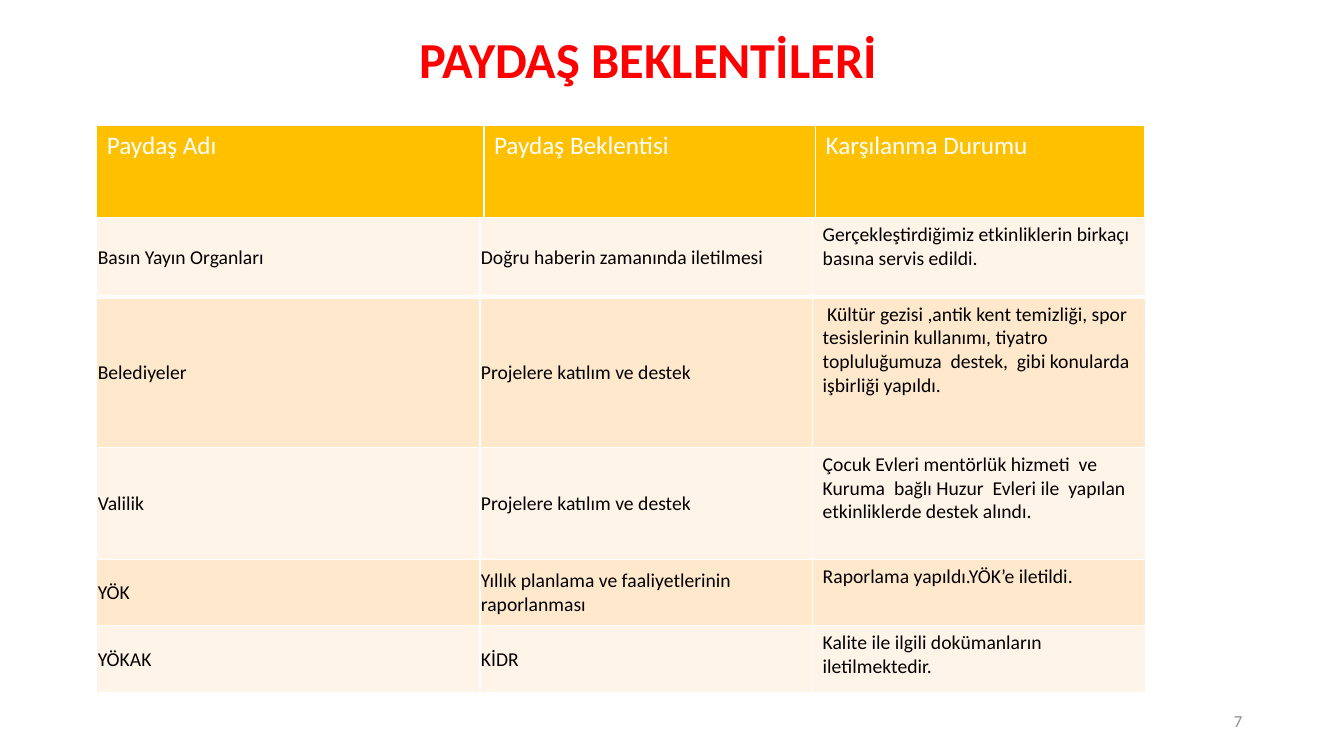
from lxml import etree
from pptx import Presentation
from pptx.dml.color import RGBColor
from pptx.enum import text
from pptx.oxml.ns import qn
from pptx.util import Inches, Pt

COLORS = {"title": "FF0000", "header": "FFC000", "light": "FFF4E7", "dark": "FFE8CC",
          "white": "FFFFFF", "black": "000000", "number": "8C8C8C"}
LEFT = 0.96
HEADER = ["Paydaş Adı", "Paydaş Beklentisi", "Karşılanma Durumu"]
STAKEHOLDERS = [
    ["Basın Yayın Organları", "Doğru haberin zamanında iletilmesi",
     "Gerçekleştirdiğimiz etkinliklerin birkaçı basına servis edildi."],
    ["Belediyeler", "Projelere katılım ve destek",
     " Kültür gezisi ,antik kent temizliği, spor tesislerinin kullanımı, tiyatro "
     "topluluğumuza  destek,  gibi konularda işbirliği yapıldı."],
    ["Valilik", "Projelere katılım ve destek",
     "Çocuk Evleri mentörlük hizmeti  ve Kuruma  bağlı Huzur  Evleri ile  yapılan "
     "etkinliklerde destek alındı."],
    ["YÖK", "Yıllık planlama ve faaliyetlerinin raporlanması",
     "Raporlama yapıldı.YÖK’e iletildi."],
    ["YÖKAK", "KİDR", "Kalite ile ilgili dokümanların iletilmektedir."],
]


def write(frame, content, size, color, bold=False, align=text.PP_ALIGN.LEFT):
    para = frame.paragraphs[0]
    para.alignment = align
    span = para.add_run()
    span.text = content
    span.font.name = "Calibri"
    span.font.size = Pt(size)
    span.font.bold = bold
    span.font.color.rgb = RGBColor.from_string(COLORS[color])


def add_grid(top, widths, heights, rows, size, color, fills):
    """Add a table with white borders, a thick one under its first row."""
    table = slide.shapes.add_table(
        len(rows), len(widths), Inches(LEFT), Inches(top),
        Inches(sum(widths)), Inches(sum(heights))).table
    for column, width in zip(table.columns, widths):
        column.width = Inches(width)
    for r, (row, height) in enumerate(zip(rows, heights)):
        table.rows[r].height = Inches(height)
        for c, content in enumerate(row):
            cell = table.cell(r, c)
            write(cell.text_frame, content, size, color)
            for side in ("L", "R", "T", "B"):
                thick = r == 0 and side == "B" or r == 1 and side == "T"
                border = etree.SubElement(cell._tc.get_or_add_tcPr(), qn("a:ln" + side),
                                          w=str(Pt(3 if thick else 1)))
                fill = etree.SubElement(border, qn("a:solidFill"))
                etree.SubElement(fill, qn("a:srgbClr"), val=COLORS["white"])
            cell.fill.solid()
            cell.fill.fore_color.rgb = RGBColor.from_string(COLORS[fills[r % len(fills)]])
    return table


deck = Presentation()
deck.slide_width, deck.slide_height = Inches(13.33), Inches(7.5)
slide = deck.slides.add_slide(deck.slide_layouts[5])

title = slide.shapes.title
title.left, title.top = Inches(2.61), Inches(0.23)
title.width, title.height = Inches(7.64), Inches(0.71)
title.text_frame.auto_size = text.MSO_AUTO_SIZE.NONE
title.text_frame.vertical_anchor = text.MSO_ANCHOR.TOP
write(title.text_frame, "PAYDAŞ BEKLENTİLERİ", 36, "title", bold=True,
      align=text.PP_ALIGN.CENTER)

number = slide.shapes.add_textbox(Inches(9.42), Inches(6.95), Inches(3), Inches(0.4))
number.text_frame.word_wrap = True
number.text_frame.vertical_anchor = text.MSO_ANCHOR.MIDDLE
write(number.text_frame, "7", 12, "number", align=text.PP_ALIGN.RIGHT)

add_grid(1.24, [3.84, 3.29, 3.26], [0.93], [HEADER], 18, "white", ["header"])
body = add_grid(2.16, [3.8, 3.3, 3.3], [0.79, 1.49, 1.11, 0.66, 0.66], STAKEHOLDERS,
                14, "black", ["light", "dark"])
for r in range(len(STAKEHOLDERS)):
    for c in range(2):
        cell = body.cell(r, c)
        cell.vertical_anchor = text.MSO_ANCHOR.MIDDLE
        cell.margin_left = cell.margin_right = cell.margin_top = Inches(0.01)
        cell.margin_bottom = 0

deck.save("out.pptx")
